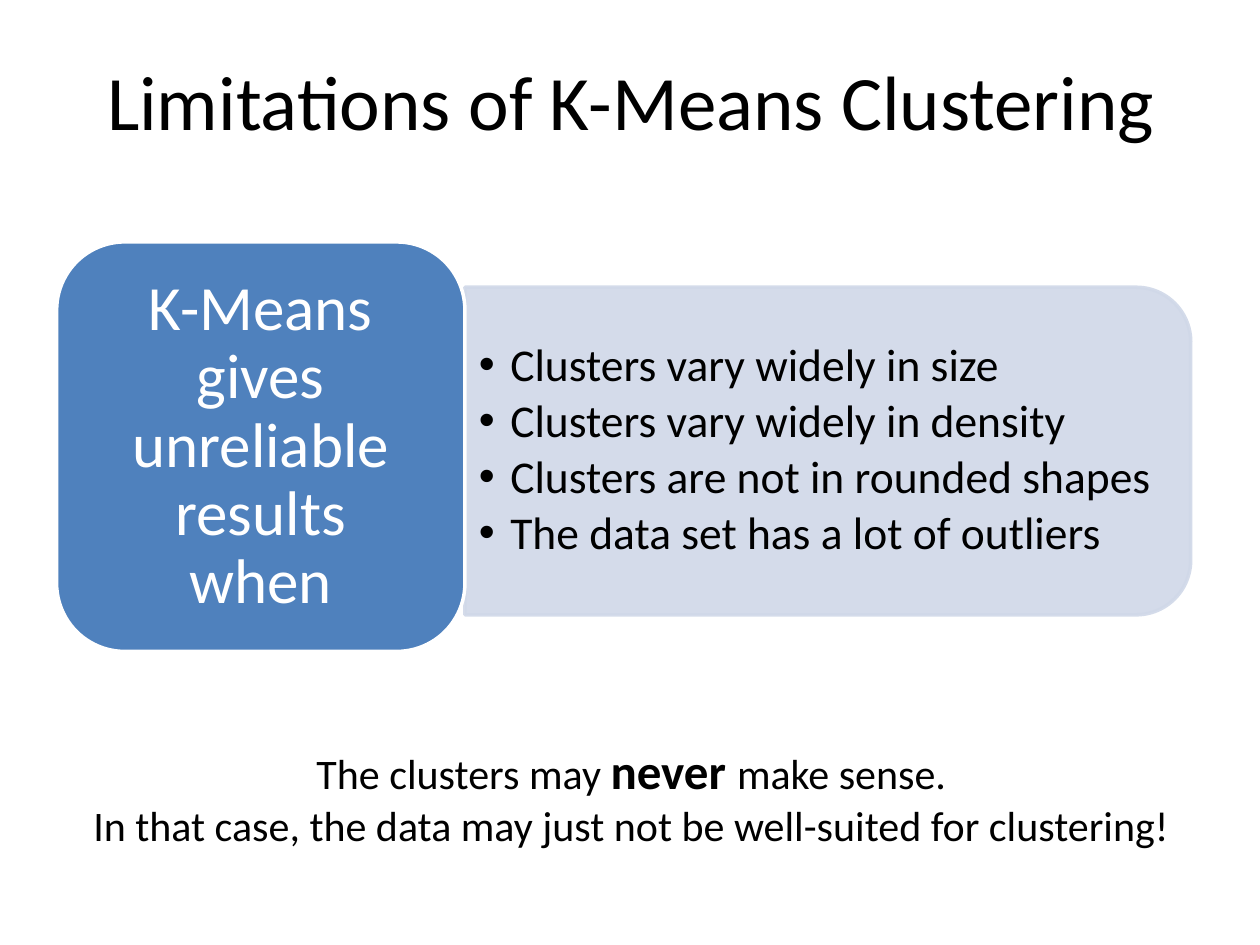
import pptx
import pptx.util
import pptx.dml.color
import pptx.enum.shapes
import pptx.enum.text
import pptx.oxml

Inches, Pt = pptx.util.Inches, pptx.util.Pt
RGB = pptx.dml.color.RGBColor
SHAPE = pptx.enum.shapes.MSO_SHAPE
ALIGN = pptx.enum.text.PP_ALIGN
MIDDLE = pptx.enum.text.MSO_ANCHOR.MIDDLE
FIT = pptx.enum.text.MSO_AUTO_SIZE

BLACK = RGB(0x00, 0x00, 0x00)
WHITE = RGB(0xFF, 0xFF, 0xFF)
BLUE = RGB(0x4F, 0x81, 0xBD)
PALE = RGB(0xD0, 0xD8, 0xE8)


def put(item, values):
    for name, value in values.items():
        setattr(item, name, value)


def box(left, top, width, height):
    names = ("left", "top", "width", "height")
    return dict(zip(names, map(Inches, (left, top, width, height))))


deck = pptx.Presentation()
put(deck, {"slide_width": Inches(10), "slide_height": Inches(7.5)})
slide = deck.slides.add_slide(deck.slide_layouts[1])
shapes = slide.shapes
title, body = slide.placeholders

# Title
put(title, box(0.51, 0.17, 9, 1.25))
title.text_frame.text = "Limitations of K-Means Clustering"
put(title.text_frame, {"vertical_anchor": MIDDLE, "auto_size": FIT.NONE})
put(title.text_frame.paragraphs[0].font, {"name": "Calibri", "size": Pt(44)})
title.text_frame.paragraphs[0].font.color.rgb = BLACK

# Pale panel, turned so its round corners face right, and blue card
panel = shapes.add_shape(SHAPE.ROUND_2_SAME_RECTANGLE,
                         **box(5.27, 0.7, 2.6, 5.76))
panel.rotation = 90
card = shapes.add_shape(SHAPE.ROUNDED_RECTANGLE, **box(0.45, 1.92, 3.24, 3.25))
for shape, fill, edge in ((panel, PALE, PALE), (card, BLUE, WHITE)):
    shape.shadow.inherit = False
    shape.fill.solid()
    shape.fill.fore_color.rgb = fill
    shape.line.color.rgb = edge
    shape.line.width = Pt(2)
for color in panel._element.spPr.iter(pptx.oxml.ns.qn("a:srgbClr")):
    alpha = pptx.oxml.parse_xml(
        "<a:alpha %s val='90000'/>" % pptx.oxml.ns.nsdecls("a"))
    color.append(alpha)

# Card text
frame = card.text_frame
put(frame, {"word_wrap": True, "vertical_anchor": MIDDLE,
            "margin_left": Inches(0.31), "margin_right": Inches(0.31)})
frame.text = "K-Means gives unreliable results when"
line = frame.paragraphs[0]
put(line, {"alignment": ALIGN.CENTER, "line_spacing": 0.9})
put(line.font, {"name": "Calibri", "size": Pt(36)})
line.font.color.rgb = WHITE

# Bulleted list, brought in front of the panel
shapes._spTree.append(body._element)
put(body, box(3.69, 2.4, 5.63, 2.35))
frame = body.text_frame
put(frame, {"vertical_anchor": MIDDLE, "auto_size": FIT.NONE,
            "margin_left": Inches(0.11), "margin_right": Inches(0.11)})
frame.text = "\n".join((
    "Clusters vary widely in size",
    "Clusters vary widely in density",
    "Clusters are not in rounded shapes",
    "The data set has a lot of outliers",
))
for line in frame.paragraphs:
    put(line, {"line_spacing": 0.9, "space_before": Pt(0),
               "space_after": Pt(4)})
    put(line.font, {"name": "Calibri", "size": Pt(26)})
    line.font.color.rgb = BLACK
    props = line._p.get_or_add_pPr()
    props.set("marL", str(Inches(0.25)))
    props.set("indent", str(Inches(-0.25)))

# Closing remark
note = shapes.add_textbox(**box(0.6, 5.83, 8.82, 0.98))
frame = note.text_frame
put(frame, {"word_wrap": False, "auto_size": FIT.SHAPE_TO_FIT_TEXT})
lines = (
    (("The clusters may ", 24, False), ("never ", 28, True),
     ("make sense.", 24, False)),
    (("In that case, the data may just not be well-suited for clustering!",
      24, False),),
)
frame.add_paragraph()
for line, parts in zip(frame.paragraphs, lines):
    line.alignment = ALIGN.CENTER
    for text, size, bold in parts:
        run = line.add_run()
        run.text = text
        put(run.font, {"name": "Calibri", "size": Pt(size), "bold": bold})
        run.font.color.rgb = BLACK

deck.save("out.pptx")
